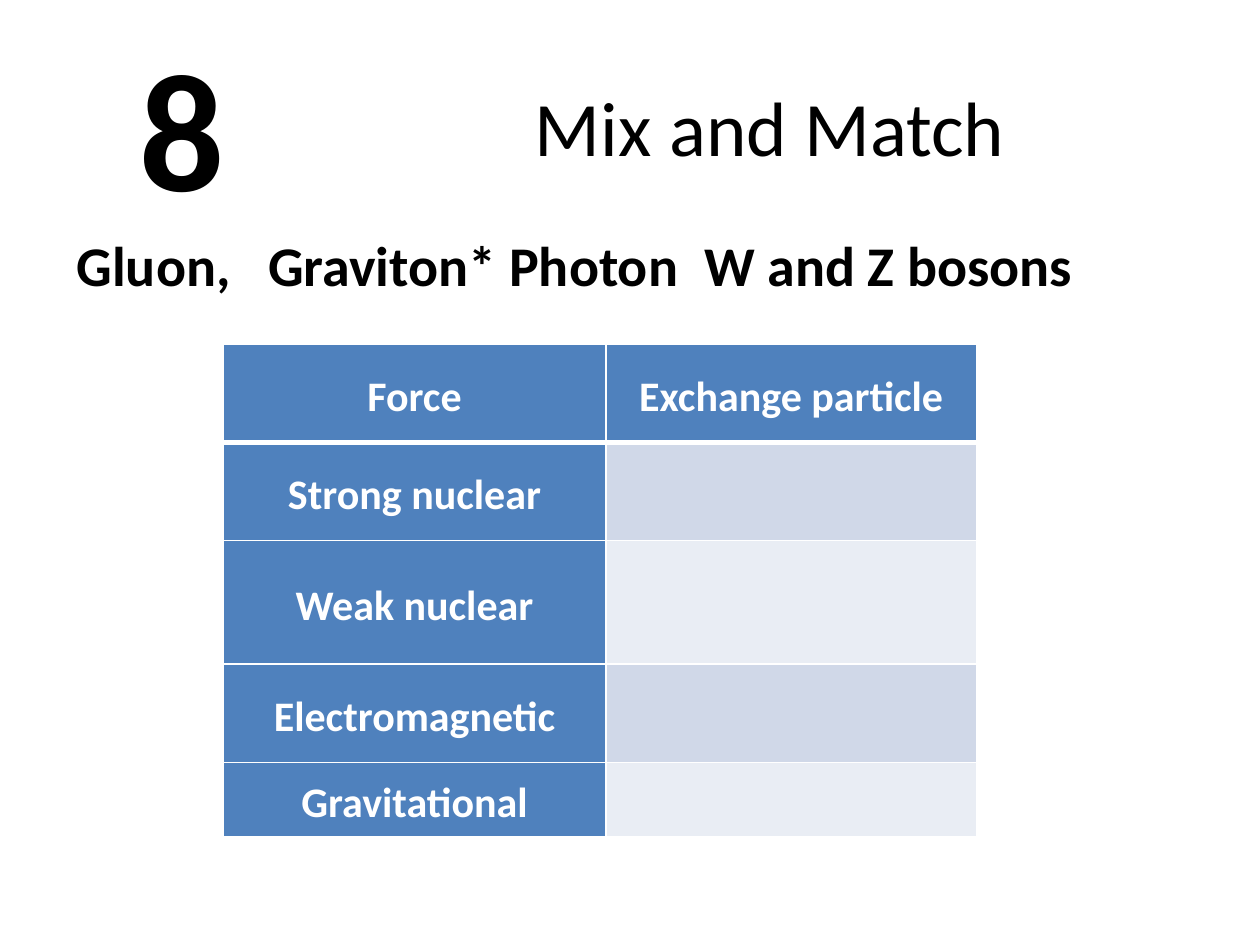
from lxml.etree import SubElement
from pptx import Presentation
from pptx.dml.color import RGBColor
from pptx.enum.text import MSO_ANCHOR, PP_ALIGN
from pptx.oxml.ns import qn
from pptx.util import Inches, Pt


def style_text(frame, size, colour, bold=False, align=PP_ALIGN.CENTER):
    """Format every run of a text frame."""
    for paragraph in frame.paragraphs:
        paragraph.alignment = align
        for run in paragraph.runs:
            run.font.name = "Calibri"
            run.font.size = Pt(size)
            run.font.bold = bold
            run.font.color.rgb = RGBColor.from_string(colour)


def paint_cell(cell, colour, bottom_width):
    """Fill a cell and draw its white borders."""
    properties = cell._tc.get_or_add_tcPr()
    for side in ("lnL", "lnR", "lnT", "lnB"):
        width = bottom_width if side == "lnB" else 1
        border = SubElement(properties, qn(f"a:{side}"), w=str(Pt(width)))
        SubElement(SubElement(border, qn("a:solidFill")), qn("a:srgbClr"), val="FFFFFF")
    cell.fill.solid()
    cell.fill.fore_color.rgb = RGBColor.from_string(colour)


presentation = Presentation()
presentation.slide_width, presentation.slide_height = Inches(10), Inches(7.5)
slide = presentation.slides.add_slide(presentation.slide_layouts[5])

heading = slide.shapes.title
heading.left, heading.top = Inches(2.72), Inches(0.3)
heading.width, heading.height = Inches(6.78), Inches(1.4)
heading.text_frame.text = "Mix and Match"
heading.text_frame.vertical_anchor = MSO_ANCHOR.MIDDLE
style_text(heading.text_frame, 44, "000000")

forces = ["Force", "Strong nuclear", "Weak nuclear", "Electromagnetic", "Gravitational"]
row_heights = [0.78, 0.78, 0.98, 0.78, 0.59]
column_widths = [3.04, 2.94]
force_table = slide.shapes.add_table(
    len(forces), len(column_widths), Inches(1.77), Inches(2.73),
    Inches(sum(column_widths)), Inches(sum(row_heights))).table
for column, width in zip(force_table.columns, column_widths):
    column.width = Inches(width)
for row_index, (force, height) in enumerate(zip(forces, row_heights)):
    force_table.rows[row_index].height = Inches(height)
    particle = "Exchange particle" if row_index == 0 else ""
    for column_index, label in enumerate((force, particle)):
        cell = force_table.cell(row_index, column_index)
        band = "D0D8E8" if row_index % 2 else "E9EDF4"
        paint_cell(cell, "4F81BD" if label else band, 1 if row_index else 3)
        if label:
            cell.text_frame.text = label
            cell.vertical_anchor = MSO_ANCHOR.MIDDLE
            cell.margin_left = cell.margin_right = Inches(0.03)
            cell.margin_top = cell.margin_bottom = Inches(0.03)
            paragraph = cell.text_frame.paragraphs[0]
            paragraph.line_spacing = 1.15
            paragraph.space_before = paragraph.space_after = Pt(3)
            style_text(cell.text_frame, 24, "FFFFFF", True)

number = slide.shapes.add_textbox(
    Inches(0.28), Inches(0.29), Inches(2.33), Inches(1.4)).text_frame
number.word_wrap = True
number.vertical_anchor = MSO_ANCHOR.MIDDLE
number.text = "8"
style_text(number, 96, "000000", True)

particles = slide.shapes.add_textbox(
    Inches(0.51), Inches(1.78), Inches(8.5), Inches(1.18)).text_frame
particles.word_wrap = True
particles.text = "Gluon,\tGraviton* Photon\tW and Z bosons"
style_text(particles, 32, "000000", True, PP_ALIGN.LEFT)
tab_stops = SubElement(particles.paragraphs[0]._p.get_or_add_pPr(), qn("a:tabLst"))
for position in (1.52, 4.98):
    SubElement(tab_stops, qn("a:tab"), pos=str(Inches(position)), algn="l")

presentation.save("out.pptx")
